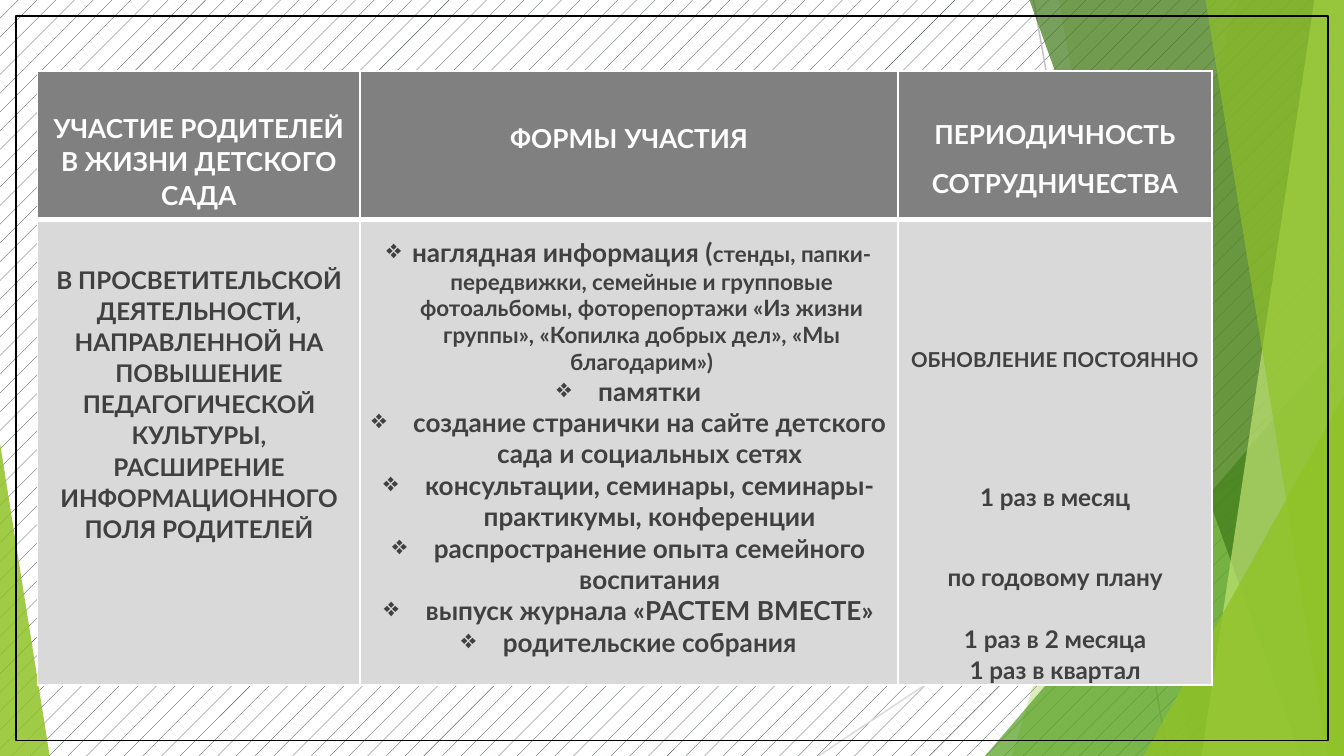
from lxml import etree
from pptx import Presentation
from pptx.dml.color import RGBColor
from pptx.enum.dml import MSO_PATTERN
from pptx.enum.shapes import MSO_CONNECTOR, MSO_SHAPE
from pptx.enum.text import PP_ALIGN
from pptx.oxml.ns import qn
from pptx.util import Inches, Pt

CENTER = PP_ALIGN.CENTER
STRAIGHT = MSO_CONNECTOR.STRAIGHT
TRIANGLE = MSO_SHAPE.ISOSCELES_TRIANGLE
RECTANGLE = MSO_SHAPE.RECTANGLE
DOTS = MSO_PATTERN.PERCENT_5

BLACK = RGBColor(0x00, 0x00, 0x00)
WHITE = RGBColor(0xFF, 0xFF, 0xFF)
INK = RGBColor(0x21, 0x2D, 0x32)
TEXT_GRAY = RGBColor(0x40, 0x40, 0x40)
HEADER_GRAY = RGBColor(0x80, 0x80, 0x80)
BODY_GRAY = RGBColor(0xD9, 0xD9, 0xD9)
LINE_GRAY = RGBColor(0xBF, 0xBF, 0xBF)
LIME = RGBColor(0x90, 0xC2, 0x26)
PALE_LIME = RGBColor(0xC0, 0xE4, 0x74)
GREEN = RGBColor(0x54, 0xA0, 0x21)
DARK_GREEN = RGBColor(0x3F, 0x78, 0x19)

FONT = "Lato"
PAGE_BOX = (0, 0, 10, 10 * 9 / 16)
FRAME_BOX = (0.12, 0.12, 9.76, 5.39)
TABLE_BOX = (0.28, 0.53, 8.74, 4.51)
COLUMN_WIDTHS = (2.4, 4, 2.34)
ROW_HEIGHTS = (1.1, 3.41)
HEADER_BORDERS = {"a:lnL": 1, "a:lnR": 1, "a:lnT": 1, "a:lnB": 3}
BODY_BORDERS = {"a:lnL": 1, "a:lnR": 1, "a:lnT": 3, "a:lnB": 1}
LOOSE = {"line_spacing": 1.07, "space_after": Pt(8)}
TIGHT = {"line_spacing": 1.07}

HEADERS = [
    (0.29, [([("УЧАСТИЕ РОДИТЕЛЕЙ\vВ ЖИЗНИ ДЕТСКОГО САДА", 14)], LOOSE, 0)]),
    (0.34, [([("ФОРМЫ", 14), (" ", 16), ("УЧАСТИЯ", 14)], LOOSE, 0)]),
    (0.34, [([("ПЕРИОДИЧНОСТЬ", 14)], LOOSE, 0),
            ([("СОТРУДНИЧЕСТВА", 14)], LOOSE, 0)]),
]
FORMS = [
    "памятки",
    "создание странички на сайте детского сада и социальных сетях",
    "консультации, семинары, семинары-практикумы, конференции",
    "распространение опыта семейного воспитания",
    "выпуск журнала «РАСТЕМ ВМЕСТЕ»",
    "родительские собрания",
]
VISUAL_FORMS = [
    ("наглядная информация (", 14),
    ("стенды, папки-передвижки, семейные и групповые фотоальбомы, "
     "фоторепортажи «Из жизни группы», «Копилка добрых дел», «Мы благодарим»)", 12),
]
BODY = [
    (0.33, [([("В ПРОСВЕТИТЕЛЬСКОЙ ДЕЯТЕЛЬНОСТИ, НАПРАВЛЕННОЙ НА ПОВЫШЕНИЕ "
               "ПЕДАГОГИЧЕСКОЙ КУЛЬТУРЫ, РАСШИРЕНИЕ ИНФОРМАЦИОННОГО ПОЛЯ "
               "РОДИТЕЛЕЙ", 13)], LOOSE, 0)]),
    (0.13, [(VISUAL_FORMS, {}, 0.19)]
     + [([(form, 14)], {}, 0.31) for form in FORMS]),
    (0.94, [([("ОБНОВЛЕНИЕ ПОСТОЯННО", 11)], LOOSE, 0),
            ([("1 раз в месяц", 13)], {**TIGHT, "space_before": Pt(50)}, 0),
            ([("по годовому плану", 13)], {**TIGHT, "space_before": Pt(26.5)}, 0),
            ([("1 раз в 2 месяца", 13)], {**TIGHT, "space_before": Pt(16.5)}, 0),
            ([("1 раз в квартал", 13)], TIGHT, 0)]),
]


def apply_format(target, values):
    """Set each attribute of the target from a dict."""
    for name, value in values.items():
        setattr(target, name, value)


def paint(shape, color, opacity):
    """Give a shape a translucent fill, no line and no shadow."""
    shape.shadow.inherit = False
    shape.fill.solid()
    shape.fill.fore_color.rgb = color
    shape.line.fill.background()
    tint = shape.fill._xPr.find(qn("a:solidFill"))[0]
    etree.SubElement(tint, qn("a:alpha"), val=str(opacity * 1000))


def add_thin_line(page, start, end, color):
    """Draw one thin straight line without a shadow."""
    line = page.shapes.add_connector(STRAIGHT, *map(Inches, start + end))
    line.line.color.rgb = color
    line.line.width = Pt(0.75)
    etree.SubElement(line._element.spPr, qn("a:effectLst"))


def add_ribbon(page, box, top_left, bottom_left, color, opacity):
    """Fill the area from a slanted edge to the right side of the box."""
    left, top, width, height = box
    right, bottom = left + width, top + height
    points = [(left + top_left, top), (right, top),
              (right, bottom), (left + bottom_left, bottom)]
    corners = [(Inches(x), Inches(y)) for x, y in points]
    builder = page.shapes.build_freeform(*corners[0])
    builder.add_line_segments(corners[1:], close=True)
    paint(builder.convert_to_shape(), color, opacity)


def add_corner(page, box, width, height, peak, color, opacity):
    """Stand a right triangle in a bottom corner, peak 0 left or 1 right."""
    left = box[0] + peak * (box[2] - width)
    top = box[1] + box[3] - height
    corner = page.shapes.add_shape(
        TRIANGLE, *map(Inches, (left, top, width, height)))
    corner.adjustments[0] = peak
    paint(corner, color, opacity)


def add_backdrop(page, box):
    """Place the pattern and the green facets over the page box."""
    fill = page.background.fill
    fill.patterned()
    fill.pattern = DOTS
    fill.fore_color.rgb = INK
    fill.back_color.rgb = WHITE
    left, top, width, height = box
    right, bottom = left + width, top + height
    add_thin_line(page, (left + 7.69, top), (left + 8.69, bottom), LINE_GRAY)
    add_thin_line(page, (right, top + 3.02), (left + 6.09, bottom), BODY_GRAY)
    add_ribbon(page, box, 9.21, 7.53, LIME, 30)
    add_ribbon(page, box, 7.88, 8.87, LIME, 20)
    add_corner(page, box, 2.67, 3.12, 1, GREEN, 72)
    add_ribbon(page, box, 7.66, 9.68, DARK_GREEN, 70)
    add_ribbon(page, box, 9.78, 8.94, PALE_LIME, 70)
    add_ribbon(page, box, 8.97, 9.88, LIME, 65)
    add_corner(page, box, 1.49, 2.68, 1, LIME, 80)
    add_corner(page, box, 0.37, 2.33, 0, LIME, 85)


def add_frame(page, box):
    """Outline the box with a black line."""
    frame = page.shapes.add_shape(RECTANGLE, *map(Inches, box))
    frame.shadow.inherit = False
    frame.fill.background()
    frame.line.color.rgb = BLACK
    frame.line.width = Pt(1)


def add_bullet(para, indent):
    """Give a paragraph a diamond bullet with a hanging indent."""
    props = para._p.get_or_add_pPr()
    props.set("marL", str(Inches(indent)))
    props.set("indent", str(-Inches(indent)))
    etree.SubElement(props, qn("a:buChar"), char="❖")


def fill_para(para, spans, values, indent, color):
    """Write formatted spans into a centred paragraph."""
    apply_format(para, {"alignment": CENTER, **values})
    if indent:
        add_bullet(para, indent)
    for text, size in spans:
        for number, part in enumerate(text.split("\v")):
            if number:
                para.add_line_break()
                gap = para._p.findall(qn("a:br"))[-1]
                etree.SubElement(gap, qn("a:rPr"), sz=str(size * 100))
            span = para.add_run()
            span.text = part
            apply_format(span.font, {"name": FONT, "size": Pt(size), "bold": True})
            span.font.color.rgb = color


def fill_cell(cell, content, fill_color, text_color, borders):
    """Set a cell's borders, fill, margins and paragraphs."""
    margin_top, paras = content
    props = cell._tc.get_or_add_tcPr()
    for side, points in borders.items():
        border = etree.SubElement(props, qn(side), w=str(Pt(points)))
        solid = etree.SubElement(border, qn("a:solidFill"))
        etree.SubElement(solid, qn("a:srgbClr"), val=str(WHITE))
    cell.fill.solid()
    cell.fill.fore_color.rgb = fill_color
    apply_format(cell, {"margin_left": Inches(0.07), "margin_right": Inches(0.07),
                        "margin_top": Inches(margin_top), "margin_bottom": 0})
    frame = cell.text_frame
    for number, (spans, values, indent) in enumerate(paras):
        para = frame.add_paragraph() if number else frame.paragraphs[0]
        fill_para(para, spans, values, indent, text_color)


def add_participation_table(page, box):
    """Build the table of parent participation in the box."""
    table = page.shapes.add_table(2, 3, *map(Inches, box)).table
    table.horz_banding = False
    for column, width in zip(table.columns, COLUMN_WIDTHS):
        column.width = Inches(width)
    for row, height in zip(table.rows, ROW_HEIGHTS):
        row.height = Inches(height)
    styles = ((HEADERS, HEADER_GRAY, WHITE, HEADER_BORDERS),
              (BODY, BODY_GRAY, TEXT_GRAY, BODY_BORDERS))
    for row, (contents, *style) in zip(table.rows, styles):
        for cell, content in zip(row.cells, contents):
            fill_cell(cell, content, *style)


def main():
    """Build and save the deck."""
    deck = Presentation()
    deck.slide_width, deck.slide_height = map(Inches, PAGE_BOX[2:])
    page = deck.slides.add_slide(deck.slide_layouts[6])
    add_backdrop(page, PAGE_BOX)
    add_frame(page, FRAME_BOX)
    add_participation_table(page, TABLE_BOX)
    deck.save("out.pptx")


if __name__ == "__main__":
    main()
